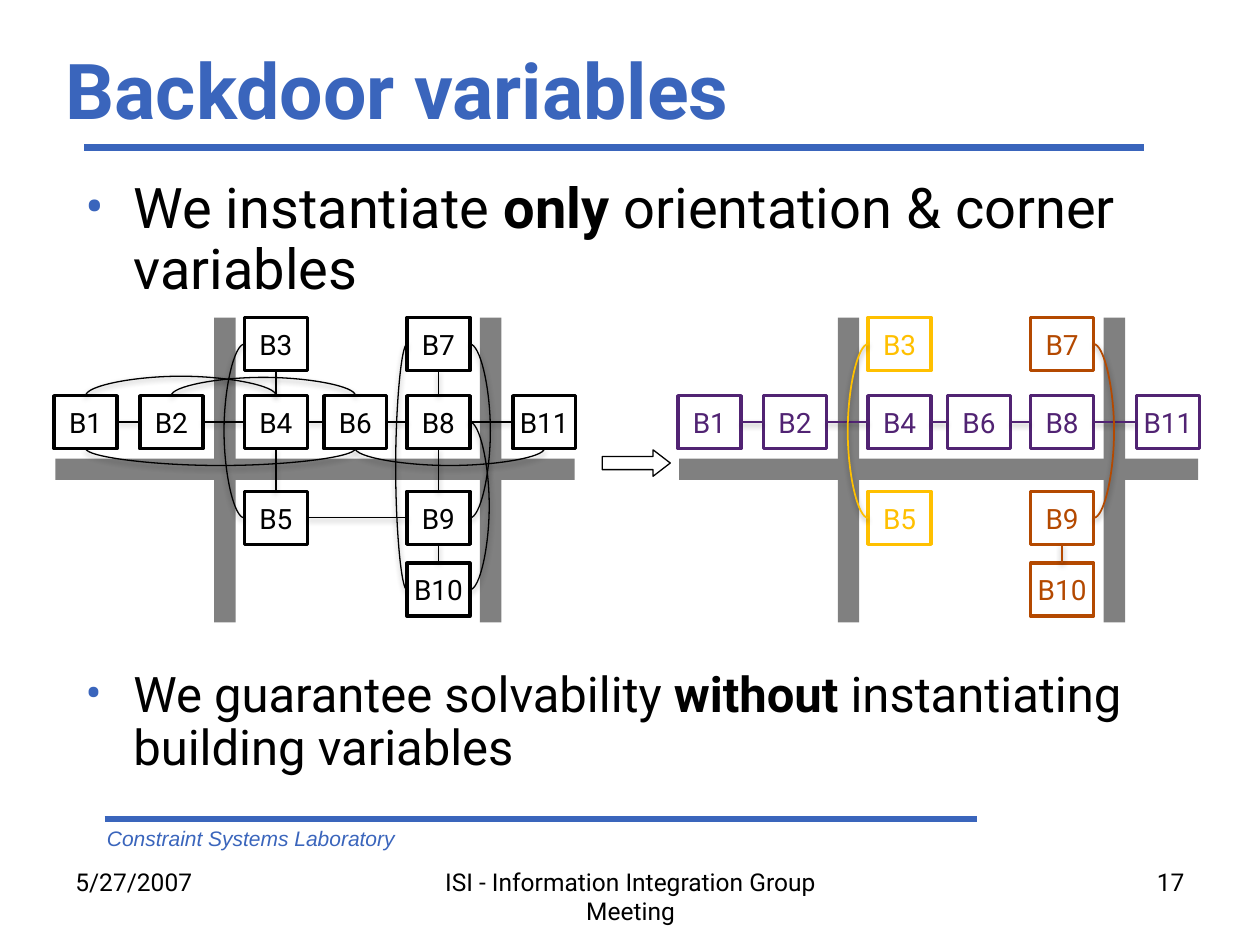
import pptx
import pptx.dml.color
import pptx.enum.shapes
import pptx.enum.text
import pptx.oxml
import pptx.oxml.ns
import pptx.util
from dataclasses import dataclass

Inches, Pt = pptx.util.Inches, pptx.util.Pt
RGB = pptx.dml.color.RGBColor.from_string
MSO, LINK = pptx.enum.shapes.MSO_SHAPE, pptx.enum.shapes.MSO_CONNECTOR
ALIGN, ANCHOR = pptx.enum.text.PP_ALIGN, pptx.enum.text.MSO_ANCHOR
NS = pptx.oxml.ns.nsdecls("a")
TOP, LEFT, BOTTOM, RIGHT = range(4)


@dataclass(frozen=True)
class Theme:
    accent: str = "3A65BC"
    ink: str = "000000"
    paper: str = "FFFFFF"
    road: str = "808080"
    purple: str = "512373"
    yellow: str = "FFC000"
    orange: str = "B44900"
    font: str = "Roboto"
    lab_font: str = "Arial"
    title: int = 44
    first: int = 32
    second: int = 28
    label: int = 16
    footer: int = 14
    lab: int = 12


T = Theme()


def add_run(p, text, size, color=T.ink, bold=False, italic=False, font=T.font):
    r = p.add_run()
    r.text = text
    r.font.name, r.font.size = font, Pt(size)
    r.font.bold, r.font.italic = bold, italic
    r.font.color.rgb = RGB(color)


def add_link(shapes, ends, color, width, bulge=None):
    """Join two (shape, site) ends; a bulge in inches bows the link out from that side."""
    (a, site), (b, site_b) = ends
    kind = LINK.STRAIGHT if bulge is None else LINK.CURVE
    c = shapes.add_connector(kind, 0, 0, 0, 0)
    c.begin_connect(a, site)
    c.end_connect(b, site_b)
    c.line.color.rgb, c.line.width = RGB(color), Pt(width)
    sp_pr = c._element.spPr
    sp_pr.append(pptx.oxml.parse_xml(
        f'<a:effectLst {NS}><a:outerShdw blurRad="{Pt(3.1)}" dist="{Pt(1.6)}" dir="5400000">'
        '<a:srgbClr val="000000"><a:alpha val="38000"/></a:srgbClr></a:outerShdw></a:effectLst>'))
    if bulge is None:
        return
    # The bend is a multiple of the link's width, so the width is kept thin but not zero.
    thin = 1588
    span = max(c.width, c.height)
    x, y = c.left + c.width // 2, c.top + c.height // 2
    c.left, c.top, c.width, c.height = x - thin // 2, y - span // 2, thin, span
    turn, flips = {TOP: (90, ("flipH", "flipV")), LEFT: (180, ("flipV",)),
                   BOTTOM: (270, ("flipH",)), RIGHT: (0, ())}[site]
    xfrm = sp_pr.find(pptx.oxml.ns.qn("a:xfrm"))
    for flip in ("flipH", "flipV"):
        xfrm.set(flip, str(int(flip in flips)))
    xfrm.set("rot", str(turn * 60000))
    guides = sp_pr.find(pptx.oxml.ns.qn("a:prstGeom")).get_or_add_avLst()
    guides.append(pptx.oxml.parse_xml(
        f'<a:gd {NS} name="adj1" fmla="val {round(Inches(bulge) / thin * 100000)}"/>'))


prs = pptx.Presentation()
prs.slide_width, prs.slide_height = Inches(10), Inches(7.5)
s = prs.slides.add_slide(prs.slide_layouts[5])

# Rules under the title and above the footer
for x1, x2, y in ((0.67, 9.08, 1.17), (0.83, 7.75, 6.5)):
    rule = s.shapes.add_connector(LINK.STRAIGHT, Inches(x1), Inches(y), Inches(x2), Inches(y))
    rule.line.color.rgb, rule.line.width = RGB(T.accent), Pt(4)
    rule._element.spPr.append(pptx.oxml.parse_xml(f"<a:effectLst {NS}/>"))

title = s.shapes.title
title.left, title.top, title.width, title.height = map(Inches, (0.42, 0.33, 9, 0.75))
tf = title.text_frame
tf.auto_size = pptx.enum.text.MSO_AUTO_SIZE.NONE
tf.vertical_anchor = ANCHOR.MIDDLE
tf.paragraphs[0].alignment = ALIGN.LEFT
add_run(tf.paragraphs[0], "Backdoor variables", T.title, T.accent, bold=True)

# Two bullets, spaced to leave room for the diagrams
body = s.shapes.add_textbox(Inches(0.58), Inches(1.38), Inches(8.92), Inches(4.95))
tf = body.text_frame
tf.word_wrap = True
bullets = (
    (T.first, 0, ("We instantiate ", "only", " orientation & corner variables")),
    (T.second, 211, ("We guarantee solvability ", "without", " instantiating building variables")),
)
for i, (size, before, parts) in enumerate(bullets):
    p = tf.add_paragraph() if i else tf.paragraphs[0]
    p.line_spacing, p.space_before = 0.9, Pt(before)
    pPr = p._p.get_or_add_pPr()
    pPr.set("marL", str(Inches(0.38)))
    pPr.set("indent", str(-Inches(0.38)))
    pPr.append(pptx.oxml.parse_xml(f'<a:buClr {NS}><a:srgbClr val="{T.accent}"/></a:buClr>'))
    pPr.append(pptx.oxml.parse_xml(f'<a:buFont {NS} typeface="{T.font}"/>'))
    pPr.append(pptx.oxml.parse_xml(f'<a:buChar {NS} char="•"/>'))
    for j, text in enumerate(parts):
        add_run(p, text, size, bold=j == 1)

arrow = s.shapes.add_shape(MSO.RIGHT_ARROW, Inches(4.78), Inches(3.57), Inches(0.54), Inches(0.21))
arrow.adjustments[0], arrow.adjustments[1] = 0.5, 0.65
arrow.shadow.inherit = False
arrow.fill.solid()
arrow.fill.fore_color.rgb = RGB(T.paper)
arrow.line.color.rgb, arrow.line.width = RGB(T.ink), Pt(0.75)

# Street map: buildings, straight links between neighbours, curved links across
buildings = {
    "B1": (0.43, 3.14), "B2": (1.11, 3.14), "B4": (1.94, 3.14), "B6": (2.57, 3.14),
    "B8": (3.23, 3.14), "B11": (4.07, 3.14), "B3": (1.94, 2.52), "B5": (1.94, 3.9),
    "B7": (3.23, 2.52), "B9": (3.23, 3.9), "B10": (3.23, 4.47),
}
roads = ((0.44, 3.64, 4.12, 0.17), (1.7, 2.52, 0.17, 2.42), (3.81, 2.52, 0.17, 2.42))
row = ["B1", "B2", "B4", "B6", "B8", "B11"]
row_links = list(zip(row, row[1:]))
across = row_links + [("B5", "B9")]
down = [("B3", "B4"), ("B4", "B5"), ("B7", "B8"), ("B8", "B9"), ("B9", "B10")]
corner_arcs = [("B3", "B5", LEFT, 0.18), ("B7", "B9", RIGHT, 0.18)]
arcs = corner_arcs + [
    ("B1", "B4", TOP, 0.17), ("B2", "B6", TOP, 0.16),
    ("B1", "B6", BOTTOM, 0.15), ("B6", "B11", BOTTOM, 0.15),
    ("B7", "B10", LEFT, 0.1), ("B8", "B10", RIGHT, 0.17),
]
groups = dict.fromkeys(row, T.purple)
groups.update(dict.fromkeys(("B3", "B5"), T.yellow))
groups.update(dict.fromkeys(("B7", "B9", "B10"), T.orange))
maps = (
    (0, dict.fromkeys(buildings, T.ink), 0.75, across, down, arcs),
    (4.95, groups, 1, row_links, [("B9", "B10")], corner_arcs),
)
for dx, colors, weight, h_links, v_links, curves in maps:
    for x, y, w, h in roads:
        road = s.shapes.add_shape(MSO.RECTANGLE, Inches(x + dx), Inches(y), Inches(w), Inches(h))
        road.shadow.inherit = False
        road.fill.solid()
        road.fill.fore_color.rgb = RGB(T.road)
        road.line.fill.background()
    boxes = {}
    for name, (x, y) in buildings.items():
        sp = s.shapes.add_shape(MSO.RECTANGLE, Inches(x + dx), Inches(y), Inches(0.5), Inches(0.42))
        sp.shadow.inherit = False
        sp.fill.solid()
        sp.fill.fore_color.rgb = RGB(T.paper)
        sp.line.color.rgb, sp.line.width = RGB(colors[name]), Pt(2)
        tf = sp.text_frame
        tf.margin_left = tf.margin_right = tf.margin_top = tf.margin_bottom = 0
        tf.vertical_anchor = ANCHOR.MIDDLE
        tf.paragraphs[0].alignment = ALIGN.CENTER
        add_run(tf.paragraphs[0], name, T.label, colors[name])
        boxes[name] = sp
    links = [(a, RIGHT, b, LEFT, None) for a, b in h_links]
    links += [(a, BOTTOM, b, TOP, None) for a, b in v_links]
    links += [(a, side, b, side, bulge) for a, b, side, bulge in curves]
    for a, site_a, b, site_b, bulge in links:
        add_link(s.shapes, ((boxes[a], site_a), (boxes[b], site_b)), colors[a], weight, bulge)

lab = s.shapes.add_textbox(Inches(0.75), Inches(6.5), Inches(5.25), Inches(0.3))
lab.text_frame.word_wrap = True
add_run(lab.text_frame.paragraphs[0], "Constraint Systems Laboratory", T.lab, T.accent,
        italic=True, font=T.lab_font)

footers = (
    (0.5, 2.33, ALIGN.LEFT, "5/27/2007"),
    (3.42, 3.17, ALIGN.CENTER, "ISI - Information Integration Group Meeting"),
    (7.17, 2.33, ALIGN.RIGHT, "17"),
)
for x, w, align, text in footers:
    box = s.shapes.add_textbox(Inches(x), Inches(6.83), Inches(w), Inches(0.52))
    box.text_frame.word_wrap = True
    p = box.text_frame.paragraphs[0]
    p.alignment = align
    add_run(p, text, T.footer)

prs.save("out.pptx")
